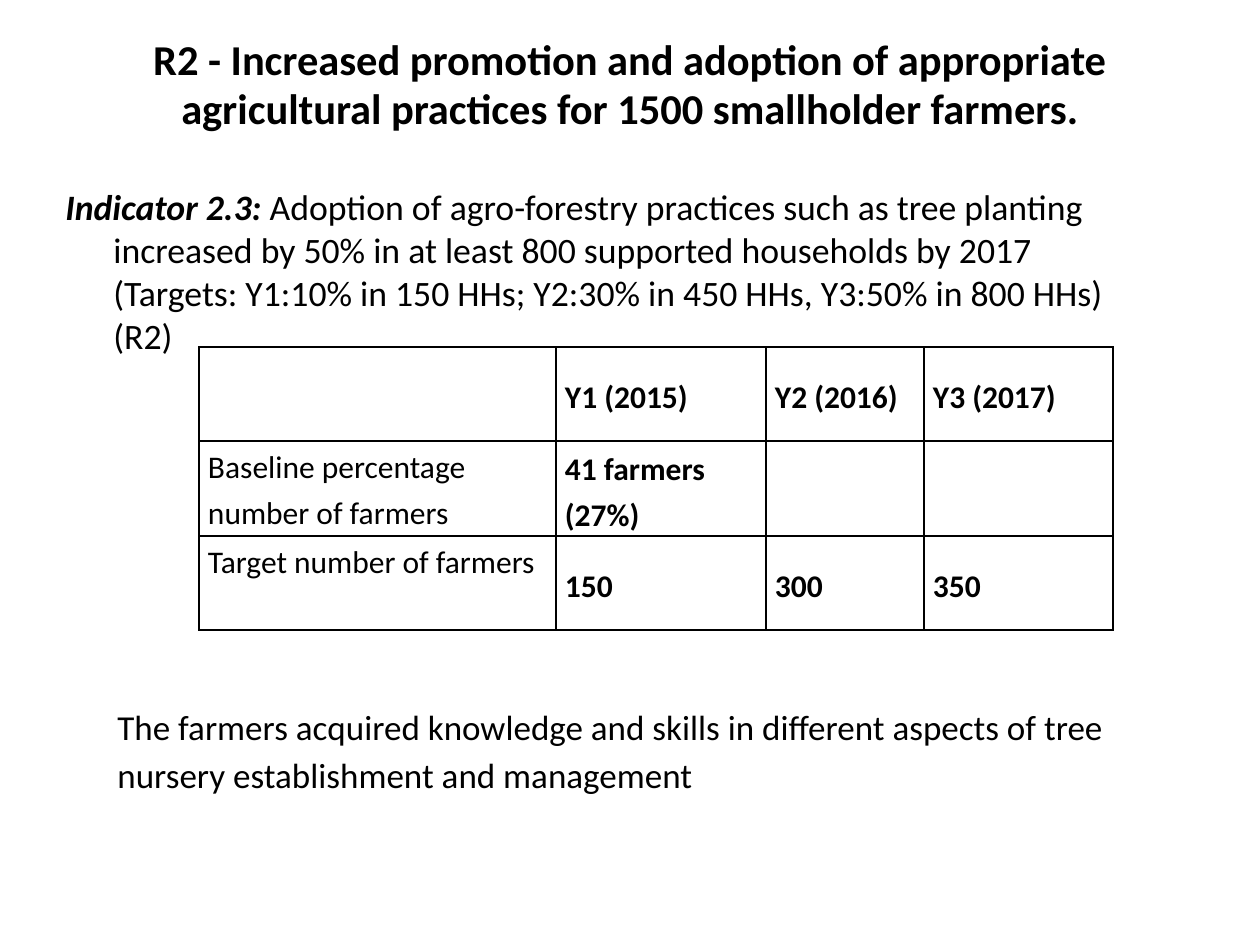
from lxml.etree import SubElement
from pptx import Presentation
from pptx.dml.color import RGBColor
from pptx.enum.text import MSO_ANCHOR, PP_ALIGN
from pptx.oxml.ns import qn
from pptx.util import Pt

INCH = 126
SCALE = 914400 / INCH
BLACK = RGBColor(0, 0, 0)
WHITE = RGBColor(255, 255, 255)
FONT = "Calibri"
COLS = [357, 210, 158, 189]
ROWS = [94, 95, 94]
CELLS = [
    ["", "Y1 (2015)", "Y2 (2016)", "Y3 (2017)"],
    ["Baseline percentage number of farmers", "41 farmers (27%)", "", ""],
    ["Target number of farmers", "150", "300", "350"],
]


def px(n):
    """Turn pixels into EMU."""
    return round(n * SCALE)


def write(frame, text, size=20, bold=False, lead="", space=1.0, align=PP_ALIGN.LEFT, hang=0):
    """Write one paragraph, with an optional bold italic lead."""
    frame.word_wrap = True
    para = frame.paragraphs[0]
    para.alignment = align
    para.line_spacing = space
    if hang:
        props = para._p.get_or_add_pPr()
        props.set("marL", str(px(hang)))
        props.set("indent", str(-px(hang)))
    for part, strong, slant in ((lead, True, True), (text, bold, False)):
        if part:
            run = para.add_run()
            run.text = part
            font = run.font
            font.name, font.size = FONT, Pt(size)
            font.bold, font.italic = strong, slant
            font.color.rgb = BLACK


def frame(slide, box):
    """Add a text box and return its frame."""
    return slide.shapes.add_textbox(*map(px, box)).text_frame


def title(slide, box):
    """Place the heading, raised a little within its box."""
    area = frame(slide, box)
    area.vertical_anchor = MSO_ANCHOR.MIDDLE
    area.margin_top, area.margin_bottom = 0, px(36)
    write(area, "R2 - Increased promotion and adoption of appropriate "
          "agricultural practices for 1500 smallholder farmers.",
          size=24.3, bold=True, space=0.97, align=PP_ALIGN.CENTER)


def goal(slide, box):
    """Place the indicator with its hanging indent."""
    write(frame(slide, box), "Adoption of agro-forestry practices such as tree planting "
          "increased by 50% in at least 800 supported households by 2017 "
          "(Targets: Y1:10% in 150 HHs; Y2:30% in 450 HHs, Y3:50% in 800 HHs) (R2)",
          size=20.4, lead="Indicator 2.3: ", hang=48)


def border(cell):
    """Draw thin black lines on all sides of a cell."""
    props = cell._tc.get_or_add_tcPr()
    for i, side in enumerate(("a:lnL", "a:lnR", "a:lnT", "a:lnB")):
        line = props.makeelement(qn(side), {"w": str(Pt(1))})
        fill = SubElement(line, qn("a:solidFill"))
        SubElement(fill, qn("a:srgbClr"), val=str(BLACK))
        props.insert(i, line)


def grid(slide, box):
    """Place the table of yearly farmer numbers."""
    table = slide.shapes.add_table(len(ROWS), len(COLS), *map(px, box)).table
    table.first_row = table.horz_banding = False
    for col, wide in zip(table.columns, COLS):
        col.width = px(wide)
    for row, high, texts in zip(table.rows, ROWS, CELLS):
        row.height = px(high)
        for i, (cell, text) in enumerate(zip(row.cells, texts)):
            cell.fill.background()
            border(cell)
            cell.margin_left = cell.margin_right = px(9)
            cell.margin_top = cell.margin_bottom = 0
            cell.vertical_anchor = MSO_ANCHOR.MIDDLE if i else MSO_ANCHOR.TOP
            write(cell.text_frame, text, size=18, bold=i > 0, space=1.2)


def note(slide, box):
    """Place the closing remark."""
    write(frame(slide, box), "The farmers acquired knowledge and skills in different aspects "
          "of tree nursery establishment and management", space=1.15)


def main():
    """Build the slide and save it."""
    deck = Presentation()
    deck.slide_width, deck.slide_height = px(10 * INCH), px(7.5 * INCH)
    slide = deck.slides.add_slide(deck.slide_layouts[6])
    back = slide.background.fill
    back.solid()
    back.fore_color.rgb = WHITE
    title(slide, (63, 38, 1134, 130))
    goal(slide, (53, 179, 1092, 147))
    grid(slide, (199, 347, sum(COLS), sum(ROWS)))
    note(slide, (105, 693, 1092, 147))
    deck.save("out.pptx")


if __name__ == "__main__":
    main()
